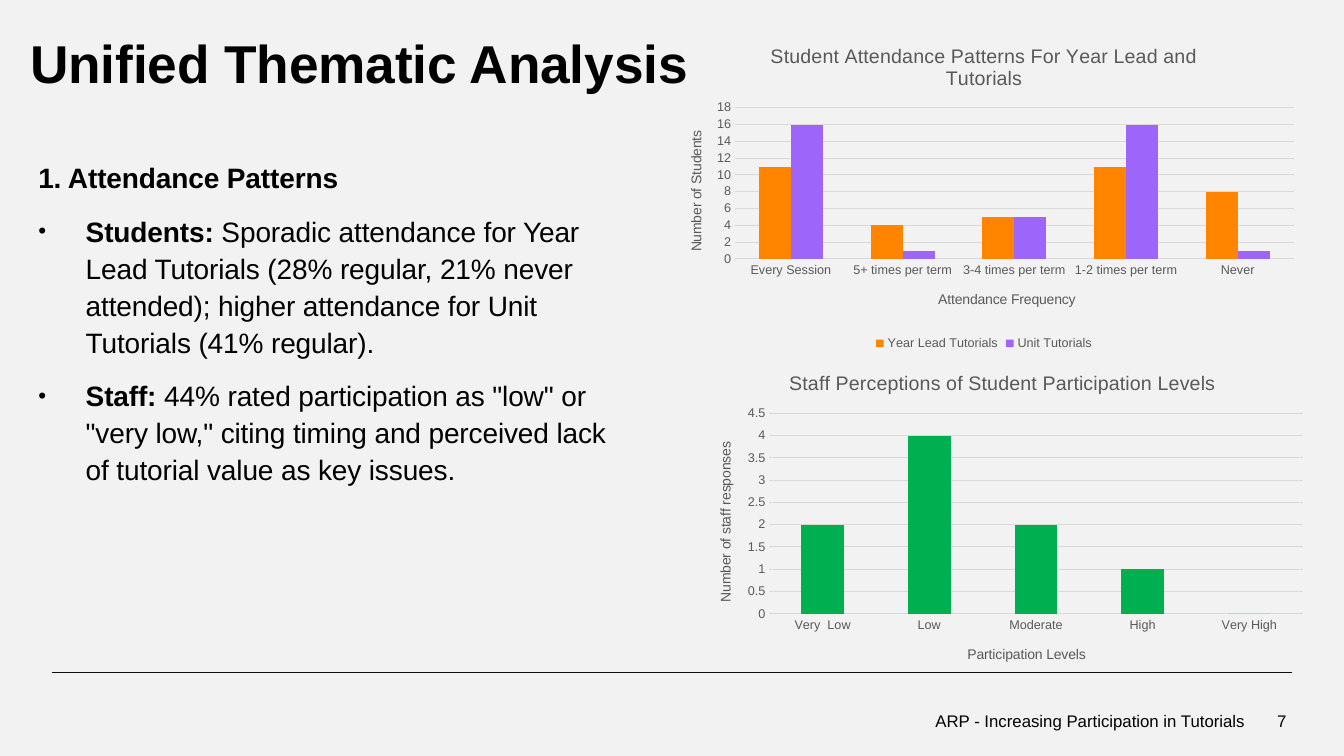
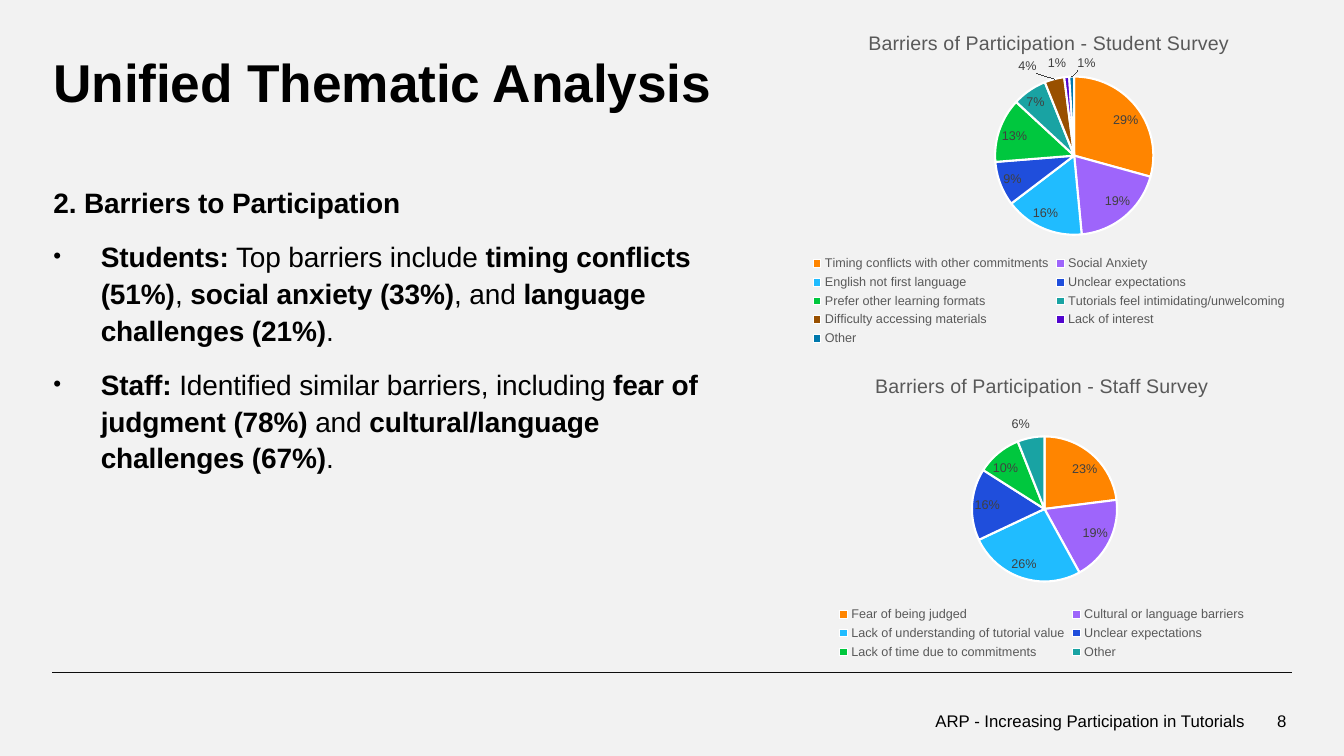
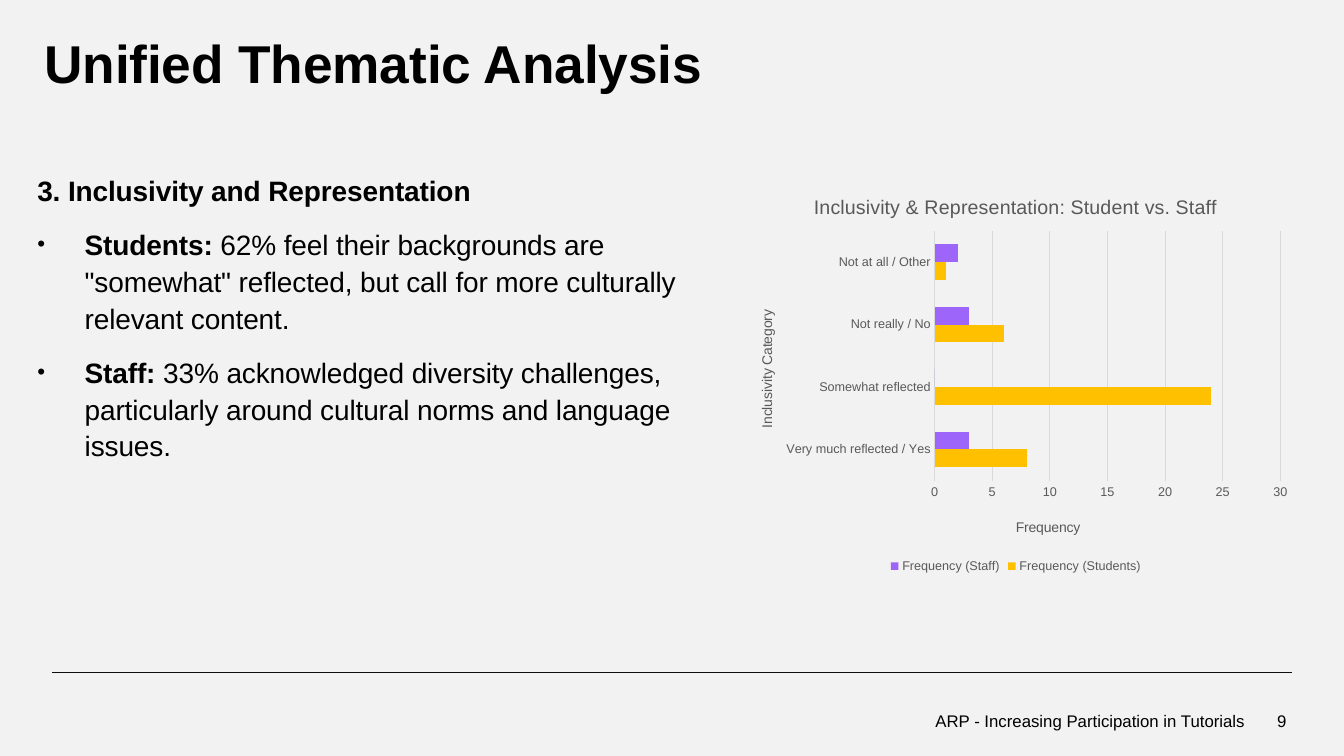
from dataclasses import dataclass

from lxml import etree
from pptx import Presentation
from pptx.chart.data import CategoryChartData
from pptx.dml.color import RGBColor
from pptx.enum.chart import XL_CHART_TYPE as ChartType
from pptx.enum.chart import XL_LABEL_POSITION as LabelPosition
from pptx.enum.chart import XL_LEGEND_POSITION as LegendPosition
from pptx.enum.chart import XL_TICK_MARK as TickMark
from pptx.enum.text import MSO_ANCHOR, PP_ALIGN
from pptx.oxml.ns import qn
from pptx.util import Inches, Pt


@dataclass(frozen=True)
class Theme:
    font: str = "Arial"
    background: str = "F2F2F2"
    text: str = "000000"
    rule: str = "0D0D0D"
    chart_text: str = "595959"
    label: str = "404040"
    grid: str = "D9D9D9"
    slice_edge: str = "FFFFFF"
    orange: str = "FF8500"
    violet: str = "9E65FB"
    green: str = "00B050"
    gold: str = "FFC000"
    slices: tuple = ("FF8500", "9E65FB", "20BCFF", "1F4EDC", "00C73E",
                     "19A3A3", "995000", "5205CE", "0078AC")
    title_size: int = 38
    body_size: int = 20
    footer_size: int = 12
    chart_title_size: int = 14
    axis_title_size: int = 10
    chart_size: int = 9


THEME = Theme()

# Content: boxes are left, top, width, height in inches; ** marks bold text
TITLE = "Unified Thematic Analysis"
FOOTER = "ARP - Increasing Participation in Tutorials"
FIRST_NUMBER = 7

SLIDES = [
    {
        "title_at": (0.3, 0.15),
        "body_box": (0.38, 1.56, 5.85, 3.53),
        "heading": "1. Attendance Patterns",
        "bullets": [
            "**Students:** Sporadic attendance for Year Lead Tutorials (28% regular, "
            "21% never attended); higher attendance for Unit Tutorials (41% regular).",
            '**Staff:** 44% rated participation as "low" or "very low," citing timing '
            "and perceived lack of tutorial value as key issues.",
        ],
        "charts": [
            {
                "kind": ChartType.COLUMN_CLUSTERED,
                "box": (6.57, 0.28, 6.38, 3.24),
                "plot": (7.29, 1.07, 5.54, 1.5),
                "title": "Student Attendance Patterns For Year Lead and Tutorials",
                "categories": ["Every Session", "5+ times per term",
                               "3-4 times per term", "1-2 times per term", "Never"],
                "series": [("Year Lead Tutorials", [11, 4, 5, 11, 8], THEME.orange),
                           ("Unit Tutorials", [16, 1, 5, 16, 1], THEME.violet)],
                "category_title": ("Attendance Frequency", 9.28, 2.85),
                "value_title": ("Number of Students", 6.79, 1.27),
                "scale": (18, 2),
                "legend": True,
            },
            {
                "kind": ChartType.COLUMN_CLUSTERED,
                "box": (6.86, 3.52, 6.17, 3.23),
                "plot": (7.63, 4.1, 5.29, 1.99),
                "title": "Staff Perceptions of Student Participation Levels",
                "categories": ["Very  Low", "Low", "Moderate", "High", "Very High"],
                "series": [("Series 1", [2, 4, 2, 1, 0], THEME.green)],
                "category_title": ("Participation Levels", 9.57, 6.38),
                "value_title": ("Number of staff responses", 7.08, 4.36),
                "scale": (4.5, 0.5),
                "legend": False,
            },
        ],
    },
    {
        "title_at": (0.53, 0.34),
        "body_box": (0.53, 1.81, 6.74, 3.53),
        "heading": "2. Barriers to Participation",
        "bullets": [
            "**Students:** Top barriers include **timing conflicts (51%)**, "
            "**social anxiety (33%)**, and **language challenges (21%)**.",
            "**Staff:** Identified similar barriers, including **fear of judgment (78%)** "
            "and **cultural/language challenges (67%)**.",
        ],
        "charts": [
            {
                "kind": ChartType.PIE,
                "box": (7.6, 0.15, 5.61, 3.32),
                "plot": (8.1, 0.76, 5.11, 1.57),
                "title": "Barriers of Participation - Student Survey",
                "categories": ["Timing conflicts with other commitments", "Social Anxiety",
                               "English not first language", "Unclear expectations",
                               "Prefer other learning formats",
                               "Tutorials feel intimidating/unwelcoming",
                               "Difficulty accessing materials", "Lack of interest",
                               "Other"],
                "series": [("Series 1", [29, 19, 16, 9, 13, 7, 4, 1, 1], None)],
                "legend": True,
            },
            {
                "kind": ChartType.PIE,
                "box": (7.46, 3.55, 5.75, 3.03),
                "plot": (8.96, 4.33, 2.8, 1.44),
                "title": "Barriers of Participation - Staff Survey",
                "categories": ["Fear of being judged", "Cultural or language barriers",
                               "Lack of understanding of tutorial value",
                               "Unclear expectations", "Lack of time due to commitments",
                               "Other"],
                "series": [("Series 1", [23, 19, 26, 16, 10, 6], None)],
                "legend": True,
            },
        ],
    },
    {
        "title_at": (0.44, 0.15),
        "body_box": (0.37, 1.69, 6.9, 3.29),
        "heading": "3. Inclusivity and Representation",
        "bullets": [
            '**Students:** 62% feel their backgrounds are "somewhat" reflected, '
            "but call for more culturally relevant content.",
            "**Staff:** 33% acknowledged diversity challenges, particularly around "
            "cultural norms and language issues.",
        ],
        "charts": [
            {
                "kind": ChartType.BAR_CLUSTERED,
                "box": (7.27, 1.76, 5.61, 3.97),
                "plot": (9.27, 2.29, 3.43, 2.48),
                "title": "Inclusivity & Representation: Student vs. Staff",
                "categories": ["Very much reflected / Yes", "Somewhat reflected",
                               "Not really / No", "Not at all / Other"],
                "series": [("Frequency (Students)", [8, 24, 6, 1], THEME.gold),
                           ("Frequency (Staff)", [3, 0, 3, 2], THEME.violet)],
                "category_title": ("Inclusivity Category", 7.49, 3.05),
                "value_title": ("Frequency", 10.05, 5.12),
                "scale": (30, 5),
                "legend": True,
            },
        ],
    },
]


# Text helpers
def color(value):
    return RGBColor.from_string(value)


def style_font(font, size, value, bold=None):
    font.name = THEME.font
    font.size = Pt(size)
    font.color.rgb = color(value)
    font.bold = bold


def prepare_frame(shape, anchor):
    frame = shape.text_frame
    frame.word_wrap = True
    frame.vertical_anchor = anchor
    frame.margin_left = frame.margin_top = frame.margin_right = frame.margin_bottom = 0
    return frame


def tighten(paragraph):
    paragraph._p.get_or_add_pPr().get_or_add_defRPr().set("spc", "-10")


def add_bullet(paragraph):
    properties = paragraph._p.get_or_add_pPr()
    properties.set("marL", str(Inches(0.47)))
    properties.set("indent", str(-Inches(0.47)))
    bullet_color = etree.SubElement(properties, qn("a:buClr"))
    etree.SubElement(bullet_color, qn("a:srgbClr"), val=THEME.text)
    etree.SubElement(properties, qn("a:buSzPct"), val="80000")
    etree.SubElement(properties, qn("a:buFont"), typeface=THEME.font)
    etree.SubElement(properties, qn("a:buChar"), char="•")


# Parts of every slide
def add_title(slide, left, top):
    title = slide.shapes.title
    title.left, title.top = Inches(left), Inches(top)
    title.width, title.height = Inches(12.28), Inches(0.79)
    frame = prepare_frame(title, MSO_ANCHOR.BOTTOM)
    frame.text = TITLE
    paragraph = frame.paragraphs[0]
    paragraph.alignment = PP_ALIGN.LEFT
    paragraph.line_spacing = 0.9
    style_font(paragraph.font, THEME.title_size, THEME.text, True)
    tighten(paragraph)


def add_body(slide, box, heading, bullets):
    shape = slide.shapes.add_textbox(*map(Inches, box))
    frame = prepare_frame(shape, MSO_ANCHOR.TOP)
    for index, text in enumerate([f"**{heading}**", *bullets]):
        paragraph = frame.add_paragraph() if index else frame.paragraphs[0]
        paragraph.line_spacing = 1.1
        paragraph.space_after = Pt(12)
        if index:
            add_bullet(paragraph)
        style_font(paragraph.font, THEME.body_size, THEME.text)
        tighten(paragraph)
        for part, words in enumerate(text.split("**")):
            if words:
                run = paragraph.add_run()
                run.text = words
                run.font.bold = part % 2 == 1


def add_footer(slide, number):
    rule = slide.shapes.add_connector(1, Inches(0.52), Inches(6.67),
                                      Inches(12.81), Inches(6.67))
    rule.line.color.rgb = color(THEME.rule)
    rule.line.width = Pt(0.25)
    etree.SubElement(rule._element.spPr, qn("a:effectLst"))
    for text, left, width in [(FOOTER, 4.28, 8.07), (str(number), 12.36, 0.4)]:
        shape = slide.shapes.add_textbox(Inches(left), Inches(6.95),
                                         Inches(width), Inches(0.4))
        frame = prepare_frame(shape, MSO_ANCHOR.MIDDLE)
        frame.text = text
        frame.paragraphs[0].alignment = PP_ALIGN.RIGHT
        style_font(frame.paragraphs[0].font, THEME.footer_size, THEME.text)


# Charts
def set_layout(parent, box, place):
    """Pin a chart part at a slide position, given as x, y or x, y, w, h."""
    for old in parent.findall(qn("c:layout")):
        parent.remove(old)
    layout = etree.Element(qn("c:layout"))
    parent.insert(0 if parent.find(qn("c:tx")) is None else 1, layout)
    manual = etree.SubElement(layout, qn("c:manualLayout"))
    if len(place) == 4:
        etree.SubElement(manual, qn("c:layoutTarget"), val="inner")
    for name in ("xMode", "yMode"):
        etree.SubElement(manual, qn(f"c:{name}"), val="edge")
    left, top, width, height = box
    origin, extent = (left, top, 0, 0), (width, height, width, height)
    for name, value, start, size in zip("xywh", place, origin, extent):
        etree.SubElement(manual, qn(f"c:{name}"), val=f"{(value - start) / size:.4f}")


def style_axis(axis, box, title, vertical):
    text, left, top = title
    axis.major_tick_mark = axis.minor_tick_mark = TickMark.NONE
    axis.format.line.fill.background()
    style_font(axis.tick_labels.font, THEME.chart_size, THEME.chart_text)
    frame = axis.axis_title.text_frame
    frame.text = text
    style_font(frame.paragraphs[0].font, THEME.axis_title_size, THEME.chart_text, False)
    body = frame._txBody.find(qn("a:bodyPr"))
    body.set("rot", "-5400000" if vertical else "0")
    body.set("vert", "horz")
    set_layout(axis.axis_title.element, box, (left, top))


def style_bars(chart, data):
    plot = chart.plots[0]
    plot.vary_by_categories = False
    plot.gap_width, plot.overlap = 150, 0
    for series, (_, _, fill) in zip(plot.series, data["series"]):
        series.format.fill.solid()
        series.format.fill.fore_color.rgb = color(fill)
    horizontal = data["kind"] == ChartType.BAR_CLUSTERED
    style_axis(chart.category_axis, data["box"], data["category_title"], horizontal)
    style_axis(chart.value_axis, data["box"], data["value_title"], not horizontal)
    axis = chart.value_axis
    axis.minimum_scale = 0
    axis.maximum_scale, axis.major_unit = data["scale"]
    axis.has_major_gridlines = True
    axis.major_gridlines.format.line.color.rgb = color(THEME.grid)
    axis.major_gridlines.format.line.width = Pt(0.75)


def style_pie(chart, data):
    plot = chart.plots[0]
    for index, fill in enumerate(THEME.slices[:len(data["categories"])]):
        point = plot.series[0].points[index]
        point.format.fill.solid()
        point.format.fill.fore_color.rgb = color(fill)
        point.format.line.color.rgb = color(THEME.slice_edge)
        point.format.line.width = Pt(1.5)
    plot.has_data_labels = True
    labels = plot.data_labels
    labels.show_value, labels.show_percentage = False, True
    labels.number_format, labels.number_format_is_linked = "0%", False
    labels.position = LabelPosition.BEST_FIT
    style_font(labels.font, THEME.chart_size, THEME.label)


def add_chart(slide, data):
    chart_data = CategoryChartData()
    chart_data.categories = data["categories"]
    for name, values, _ in data["series"]:
        chart_data.add_series(name, values)
    frame = slide.shapes.add_chart(data["kind"], *map(Inches, data["box"]), chart_data)
    chart = frame.chart
    style_font(chart.font, THEME.axis_title_size, THEME.text)
    chart.has_title = True
    title = chart.chart_title.text_frame
    title.text = data["title"]
    style_font(title.paragraphs[0].font, THEME.chart_title_size, THEME.chart_text, False)
    chart.has_legend = data["legend"]
    if data["legend"]:
        chart.legend.position = LegendPosition.BOTTOM
        chart.legend.include_in_layout = False
        style_font(chart.legend.font, THEME.chart_size, THEME.chart_text)
    style = style_pie if data["kind"] == ChartType.PIE else style_bars
    style(chart, data)
    plot_area = chart.element.find(".//" + qn("c:plotArea"))
    set_layout(plot_area, data["box"], data["plot"])


def main():
    presentation = Presentation()
    presentation.slide_width, presentation.slide_height = Inches(13.33), Inches(7.5)
    background = presentation.slide_master.background.fill
    background.solid()
    background.fore_color.rgb = color(THEME.background)
    for number, content in enumerate(SLIDES, FIRST_NUMBER):
        slide = presentation.slides.add_slide(presentation.slide_layouts[5])
        add_body(slide, content["body_box"], content["heading"], content["bullets"])
        add_title(slide, *content["title_at"])
        add_footer(slide, number)
        for data in content["charts"]:
            add_chart(slide, data)
    presentation.save("out.pptx")


if __name__ == "__main__":
    main()
